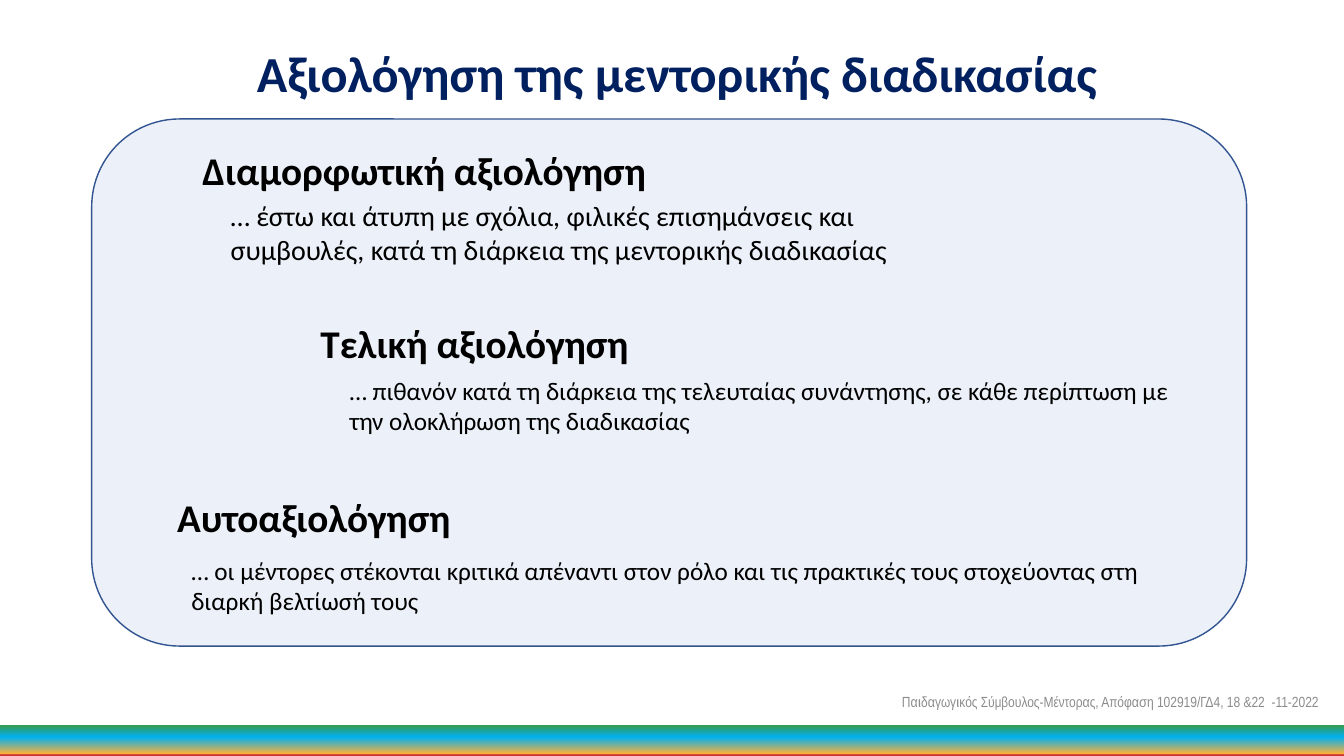
from dataclasses import dataclass

from lxml import etree
from pptx import Presentation
from pptx.dml.color import RGBColor
from pptx.enum import shapes, text
from pptx.oxml import ns
from pptx.util import Pt


@dataclass(frozen=True)
class Theme:
    body_font: str = "Calibri"
    footer_font: str = "Arial Narrow"
    navy: str = "002060"
    black: str = "000000"
    grey: str = "8C8C8C"
    panel_fill: str = "B4C7E7"
    panel_line: str = "325491"
    band_stops: tuple = ((0, "399A48"), (39, "00B0F0"), (93, "FBB03B"), (96, "CC3333"))
    title_size: float = 36
    heading_size: float = 28
    lead_size: float = 20
    detail_size: float = 18
    footer_size: float = 10.5


class SlideBuilder:
    def __init__(self, slide, theme):
        self.slide = slide
        self.theme = theme

    def shape(self, kind, box):
        item = self.slide.shapes.add_shape(kind, *map(Pt, box))
        item.shadow.inherit = False
        return item

    def panel(self, box, opacity):
        """Add the rounded panel; opacity is a percentage."""
        panel = self.shape(shapes.MSO_SHAPE.ROUNDED_RECTANGLE, box)
        panel.fill.solid()
        panel.fill.fore_color.rgb = RGBColor.from_string(self.theme.panel_fill)
        color = panel.fill._xPr.find(".//" + ns.qn("a:srgbClr"))
        etree.SubElement(color, ns.qn("a:alpha"), val=str(opacity * 1000))
        panel.line.color.rgb = RGBColor.from_string(self.theme.panel_line)
        panel.line.width = Pt(1)

    def gradient_band(self, box):
        """Add a borderless band shaded from top to bottom."""
        band = self.shape(shapes.MSO_SHAPE.RECTANGLE, box)
        band.line.fill.background()
        band.fill.gradient()
        band.fill.gradient_angle = 270
        stops = band.fill._xPr.find(".//" + ns.qn("a:gsLst"))
        for stop in list(stops):
            stops.remove(stop)
        for position, color in self.theme.band_stops:
            stop = etree.SubElement(stops, ns.qn("a:gs"), pos=str(position * 1000))
            etree.SubElement(stop, ns.qn("a:srgbClr"), val=color)

    def label(self, wording, box, size, color=None, font=None, bold=False, **frame_format):
        frame = self.slide.shapes.add_textbox(*map(Pt, box)).text_frame
        frame_values = {"word_wrap": True, "auto_size": text.MSO_AUTO_SIZE.SHAPE_TO_FIT_TEXT}
        for name, value in (frame_values | frame_format).items():
            setattr(frame, name, value)
        run = frame.paragraphs[0].add_run()
        run.text = wording
        font_values = {"name": font or self.theme.body_font, "size": Pt(size), "bold": bold}
        for name, value in font_values.items():
            setattr(run.font, name, value)
        run.font.color.rgb = RGBColor.from_string(color or self.theme.black)

    def evaluation(self, heading, heading_at, detail, detail_box, detail_size):
        """Add one kind of evaluation: a bold heading and its explanation."""
        self.label(heading, (*heading_at, 512, 41), self.theme.heading_size, bold=True)
        self.label(detail, detail_box, detail_size)


def main():
    width, height = 960, 540
    theme = Theme()
    deck = Presentation()
    deck.slide_width, deck.slide_height = Pt(width), Pt(height)
    builder = SlideBuilder(deck.slides.add_slide(deck.slide_layouts[6]), theme)

    builder.panel((65.5, 85, 825, 376.5), opacity=25)
    builder.label("Αξιολόγηση της μεντορικής διαδικασίας", (176.4, 26.6, 720.7, 51),
                  theme.title_size, theme.navy, bold=True)

    evaluations = (
        ("Διαμορφωτική αξιολόγηση", (137.5, 100.8),
         "… έστω και άτυπη με σχόλια, φιλικές επισημάνσεις και συμβουλές, "
         "κατά τη διάρκεια της μεντορικής διαδικασίας",
         (157.7, 138.2, 510.5, 55.5), theme.lead_size),
        ("Τελική αξιολόγηση", (221.8, 224.6),
         "… πιθανόν κατά τη διάρκεια της τελευταίας συνάντησης, "
         "σε κάθε περίπτωση με την ολοκλήρωση της διαδικασίας",
         (242.6, 264.2, 615.6, 51), theme.detail_size),
        ("Αυτοαξιολόγηση", (119.5, 348.5),
         "… οι μέντορες στέκονται κριτικά απέναντι στον ρόλο και τις πρακτικές "
         "τους στοχεύοντας στη διαρκή βελτίωσή τους",
         (129.6, 393.1, 729.4, 51), theme.detail_size),
    )
    for evaluation in evaluations:
        builder.evaluation(*evaluation)

    builder.label("Παιδαγωγικός Σύμβουλος-Μέντορας, Απόφαση 102919/ΓΔ4, 18 &22  -11-2022",
                  (637.2, 486.7, 322.8, 28.8), theme.footer_size, theme.grey,
                  theme.footer_font, auto_size=text.MSO_AUTO_SIZE.NONE,
                  vertical_anchor=text.MSO_ANCHOR.MIDDLE)
    band_top = 517.7
    builder.gradient_band((0, band_top, width, height - band_top))
    deck.save("out.pptx")


if __name__ == "__main__":
    main()
